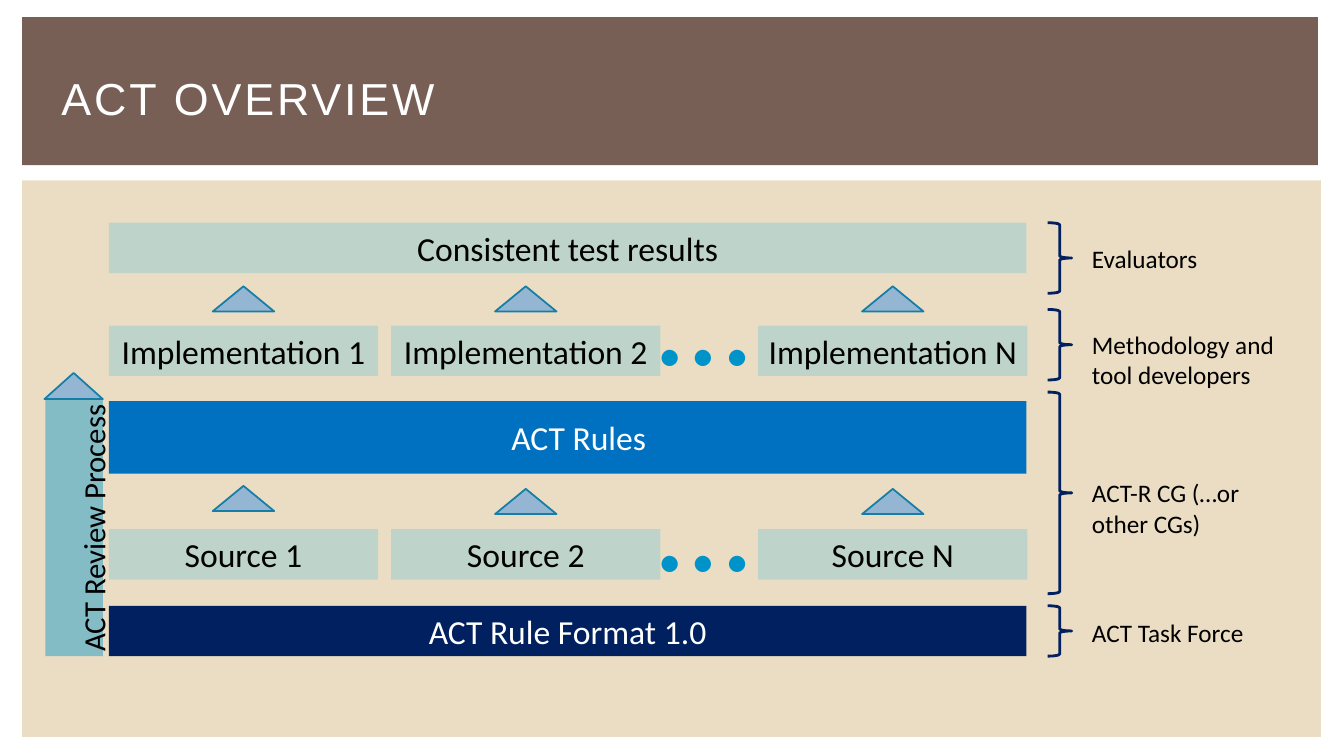
from pptx import Presentation
from pptx.dml.color import RGBColor
from pptx.enum.shapes import MSO_SHAPE
from pptx.enum.text import MSO_ANCHOR, PP_ALIGN
from pptx.oxml.ns import qn
from pptx.util import Inches, Pt
from lxml.etree import SubElement

WHITE = RGBColor(0xFF, 0xFF, 0xFF)
BLACK = RGBColor(0x00, 0x00, 0x00)
BROWN = RGBColor(0x77, 0x5F, 0x55)
SAND = RGBColor(0xEB, 0xDD, 0xC3)
NAVY = RGBColor(0x00, 0x20, 0x60)
BLUE = RGBColor(0x00, 0x70, 0xC0)
SKY = RGBColor(0x00, 0xB0, 0xF0)
CYAN = RGBColor(0x00, 0x93, 0xC9)
STEEL = RGBColor(0x94, 0xB6, 0xD2)
TEAL = RGBColor(0x14, 0x7E, 0xA6)


def add_figure(kind, place, fill=None, alpha=None, line=None, width=1.25):
    """Add a preset shape without shadow; alpha is the opacity in percent."""
    shape = page.shapes.add_shape(kind, *map(Inches, place))
    shape.shadow.inherit = False
    if fill is None:
        shape.fill.background()
    else:
        shape.fill.solid()
        shape.fill.fore_color.rgb = fill
    if alpha:
        color = shape.element.spPr.find(f".//{qn('a:srgbClr')}")
        SubElement(color, qn("a:alpha"), val=str(alpha * 1000))
    if line is None:
        shape.line.fill.background()
    else:
        shape.line.color.rgb = line
        shape.line.width = Pt(width)
    return shape


def write(shape, text, size, color=BLACK, align=PP_ALIGN.LEFT,
          anchor=MSO_ANCHOR.TOP, font="Calibri", inset=0.05):
    frame = shape.text_frame
    frame_format = {"word_wrap": True, "vertical_anchor": anchor}
    for side in ("left", "top", "right", "bottom"):
        frame_format[f"margin_{side}"] = Inches(inset)
    for name, value in frame_format.items():
        setattr(frame, name, value)
    para = frame.paragraphs[0]
    para.alignment = align
    span = para.add_run()
    span.text = text
    for name, value in {"name": font, "size": Pt(size)}.items():
        setattr(span.font, name, value)
    span.font.color.rgb = color
    return span


deck = Presentation()
deck.slide_width, deck.slide_height = Inches(13.33), Inches(7.5)
page = deck.slides.add_slide(deck.slide_layouts[6])

# Background panels and title
add_figure(MSO_SHAPE.RECTANGLE, (0.22, 0.17, 12.85, 1.47), BROWN)
add_figure(MSO_SHAPE.RECTANGLE, (0.22, 1.79, 12.88, 5.52), SAND)
title = page.shapes.add_textbox(*map(Inches, (0.56, 0.39, 12.22, 1.15)))
title_span = write(title, "ACT OVERVIEW", 32, WHITE,
                   anchor=MSO_ANCHOR.MIDDLE, font="Arial")
title_span.font._element.set("spc", "200")

# Layers of the stack
LEFT, FULL_WIDTH, BLOCK_WIDTH, BAR_HEIGHT = 1.08, 9.1, 2.67, 0.5
COLUMNS = {"1": LEFT, "2": 3.88, "N": 7.52}
bars = [
    ("ACT Rule Format 1.0", LEFT, 6.01, FULL_WIDTH, BAR_HEIGHT, NAVY, None, WHITE),
    ("ACT Rules", LEFT, 3.98, FULL_WIDTH, 0.72, BLUE, None, WHITE),
    ("Consistent test results", LEFT, 2.21, FULL_WIDTH, BAR_HEIGHT, SKY, 19, BLACK),
]
for layer, top in (("Implementation", 3.23), ("Source", 5.25)):
    for suffix, left in COLUMNS.items():
        bars.append((f"{layer} {suffix}", left, top, BLOCK_WIDTH, BAR_HEIGHT,
                     SKY, 19, BLACK))
for text, left, top, width, height, fill, alpha, color in bars:
    bar = add_figure(MSO_SHAPE.RECTANGLE, (left, top, width, height), fill, alpha)
    write(bar, text, 24, color, PP_ALIGN.CENTER, MSO_ANCHOR.MIDDLE)
    if text == "ACT Rules":
        bar.text_frame.margin_left = Inches(0.27)

# Upward arrowheads between the layers
ARROW_WIDTH = 0.61
for tops in ((2.84, 2.84, 2.84), (4.82, 4.85, 4.85)):
    for left, top in zip(COLUMNS.values(), tops):
        arrow_left = left + (BLOCK_WIDTH - ARROW_WIDTH) / 2
        add_figure(MSO_SHAPE.ISOSCELES_TRIANGLE,
                   (arrow_left, top, ARROW_WIDTH, 0.25), STEEL, line=TEAL)

for top in (2.24, 4.29):
    dots = page.shapes.add_textbox(*map(Inches, (6.47, top, 0.72, 1.64)))
    write(dots, "…", 96, CYAN)

# Responsible groups: brace top and height, label top and height
groups = [
    ("Evaluators", 2.21, 0.7, 2.36, 0.39),
    ("Methodology and tool developers", 3.07, 0.7, 3.22, 0.68),
    ("ACT-R CG (…or other CGs)", 3.89, 2, 4.69, 0.68),
    ("ACT Task Force", 6.01, 0.5, 6.07, 0.39),
]
for text, brace_top, brace_height, label_top, label_height in groups:
    add_figure(MSO_SHAPE.RIGHT_BRACE, (10.39, brace_top, 0.24, brace_height),
               line=NAVY, width=2)
    label = page.shapes.add_textbox(
        *map(Inches, (10.78, label_top, 2.04, label_height)))
    write(label, text, 18)

# Review process arrow
add_figure(MSO_SHAPE.RECTANGLE, (0.45, 3.97, 0.57, 2.54), CYAN, 44)
review = page.shapes.add_textbox(*map(Inches, (-0.17, 4.88, 2.54, 0.72)))
review.rotation = 270
write(review, "ACT Review Process", 22, align=PP_ALIGN.CENTER, inset=0)
add_figure(MSO_SHAPE.ISOSCELES_TRIANGLE, (0.44, 3.7, 0.58, 0.26), STEEL, line=TEAL)

deck.save("out.pptx")
